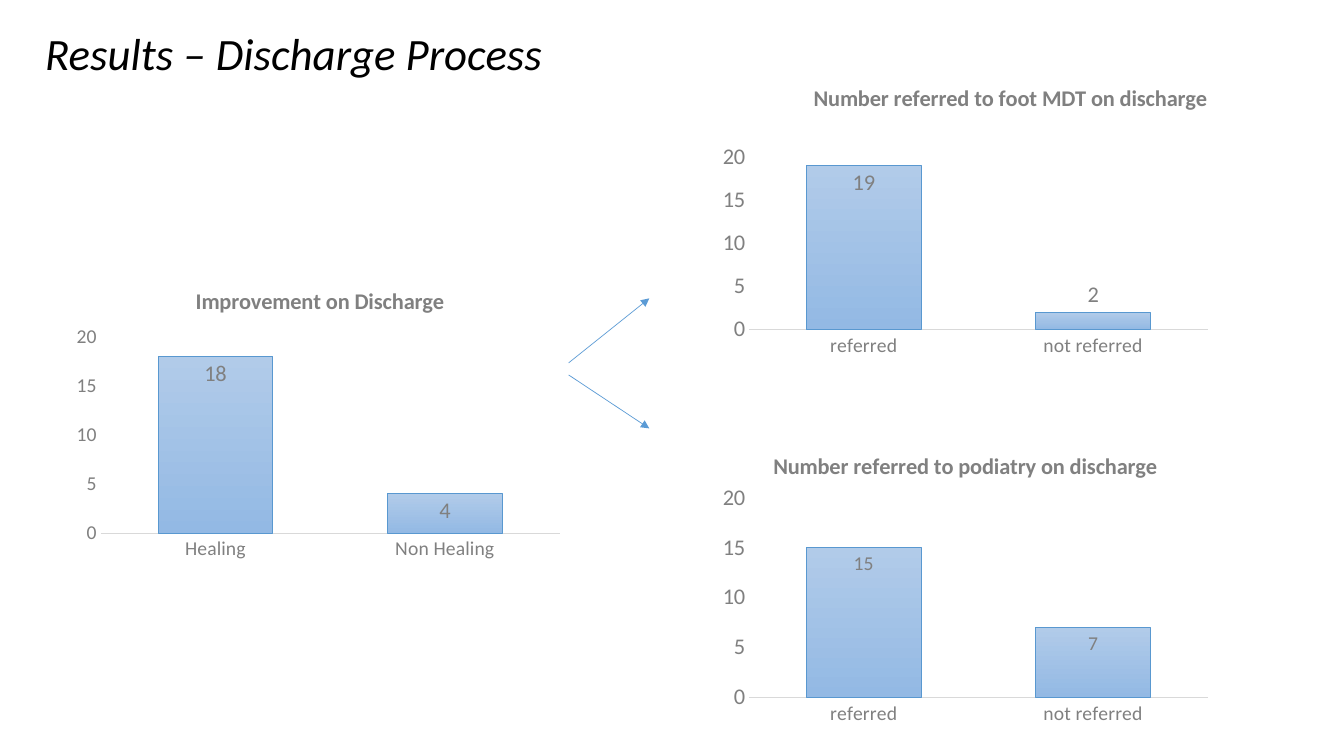
from dataclasses import dataclass

from lxml import etree
from pptx import Presentation
from pptx.chart.data import CategoryChartData
from pptx.dml.color import RGBColor
from pptx.enum.chart import XL_CHART_TYPE, XL_LABEL_POSITION, XL_TICK_MARK
from pptx.enum.shapes import MSO_CONNECTOR
from pptx.enum.text import MSO_ANCHOR
from pptx.oxml.ns import qn
from pptx.util import Pt

EMU_PER_PX = 9144
COLUMNS = XL_CHART_TYPE.COLUMN_CLUSTERED
INSIDE_END = XL_LABEL_POSITION.INSIDE_END
OUTSIDE_END = XL_LABEL_POSITION.OUTSIDE_END
NO_TICKS = XL_TICK_MARK.NONE
STRAIGHT = MSO_CONNECTOR.STRAIGHT
MIDDLE = MSO_ANCHOR.MIDDLE
CHART_SIZE = (500, 300)


@dataclass(frozen=True)
class Theme:
    font: str = "Calibri"
    ink: RGBColor = RGBColor.from_string("000000")
    paper: RGBColor = RGBColor.from_string("FFFFFF")
    grey: RGBColor = RGBColor.from_string("808080")
    axis: RGBColor = RGBColor.from_string("D9D9D9")
    bar_top: RGBColor = RGBColor.from_string("B1CBE9")
    bar_bottom: RGBColor = RGBColor.from_string("93B9E4")
    bar_edge: RGBColor = RGBColor.from_string("5998D0")
    arrow: RGBColor = RGBColor.from_string("5B9BD5")
    heading: int = 32
    large: int = 16
    small: int = 14


THEME = Theme()


@dataclass(frozen=True)
class ColumnChart:
    title: str
    position: tuple
    categories: tuple
    values: tuple
    title_corner: tuple
    plot_area: tuple
    axis_size: int = THEME.large
    label_size: int = THEME.large
    outside_points: tuple = ()


CHARTS = (
    ColumnChart("Number referred to foot MDT on discharge", (708, 60),
                ("referred", "not referred"), (19, 2),
                (0.19, 0.06), (0.07, 0.32, 0.91, 0.57), outside_points=(1,)),
    ColumnChart("Number referred to podiatry on discharge", (708, 425),
                ("referred", "not referred"), (15, 7),
                (0.11, 0.06), (0.07, 0.23, 0.91, 0.66), label_size=THEME.small),
    ColumnChart("Improvement on Discharge", (65, 262),
                ("Healing", "Non Healing"), (18, 4),
                (0.25, 0.06), (0.07, 0.24, 0.91, 0.65), axis_size=THEME.small),
)
ARROWS = ((564, 360, 644, 296), (564, 372, 644, 425))


def px(*lengths):
    return [length * EMU_PER_PX for length in lengths]


def style_font(font, size, color, bold=False, italic=False):
    font.name = THEME.font
    font.size = Pt(size)
    font.color.rgb = color
    font.bold = bold
    font.italic = italic


def set_layout(parent, index, fractions, inner=False):
    """Place a chart part by fractions of the chart: x, y and optionally w, h."""
    for old in parent.findall(qn("c:layout")):
        parent.remove(old)
    layout = etree.Element(qn("c:layout"))
    manual = etree.SubElement(layout, qn("c:manualLayout"))
    settings = [("layoutTarget", "inner")] if inner else []
    settings += [("xMode", "edge"), ("yMode", "edge")]
    settings += zip("xywh", fractions)
    for name, value in settings:
        etree.SubElement(manual, qn(f"c:{name}")).set("val", str(value))
    parent.insert(index, layout)


def style_title(chart, content):
    chart.has_title = True
    title = chart.chart_title
    para = title.text_frame.paragraphs[0]
    para.text = content.title
    style_font(para.font, THEME.large, THEME.grey, bold=True)
    title.include_in_layout = False
    set_layout(title._element, 1, content.title_corner)


def style_axes(chart, content):
    for axis, size in ((chart.category_axis, THEME.small),
                       (chart.value_axis, content.axis_size)):
        axis.has_major_gridlines = False
        axis.major_tick_mark = axis.minor_tick_mark = NO_TICKS
        style_font(axis.tick_labels.font, size, THEME.grey)
    category_line = chart.category_axis.format.line
    category_line.color.rgb = THEME.axis
    category_line.width = Pt(0.75)
    value_axis = chart.value_axis
    value_axis.minimum_scale = 0
    value_axis.maximum_scale = 20
    value_axis.major_unit = 5
    value_axis.format.line.fill.background()


def style_columns(plot, content):
    plot.gap_width = 100
    plot.overlap = -24
    plot.vary_by_categories = False
    series = plot.series[0]
    series.invert_if_negative = False
    fill = series.format.fill
    fill.gradient()
    fill.gradient_angle = 270
    for stop, color in zip(fill.gradient_stops, (THEME.bar_top, THEME.bar_bottom)):
        stop.color.rgb = color
    series.format.line.color.rgb = THEME.bar_edge
    series.format.line.width = Pt(0.75)
    labels = series.data_labels
    labels.show_value = True
    labels.position = INSIDE_END
    style_font(labels.font, content.label_size, THEME.grey)
    for index in content.outside_points:
        label = series.points[index].data_label
        style_font(label.font, content.label_size, THEME.grey)
        label.position = OUTSIDE_END


def add_column_chart(slide, content):
    data = CategoryChartData()
    data.categories = content.categories
    data.add_series("Series 1", content.values)
    frame = slide.shapes.add_chart(
        COLUMNS, *px(*content.position, *CHART_SIZE), data)
    chart = frame.chart
    chart.has_legend = False
    style_font(chart.font, 10, THEME.ink)
    style_title(chart, content)
    style_axes(chart, content)
    style_columns(chart.plots[0], content)
    plot_area = chart._chartSpace.find(".//" + qn("c:plotArea"))
    set_layout(plot_area, 0, content.plot_area, inner=True)


def add_heading(slide, text):
    box = slide.shapes.add_textbox(*px(35, 21, 634, 69))
    box.fill.solid()
    box.fill.fore_color.rgb = THEME.paper
    frame = box.text_frame
    frame.word_wrap = True
    frame.vertical_anchor = MIDDLE
    para = frame.paragraphs[0]
    para.text = text
    para.line_spacing = 0.9
    style_font(para.font, THEME.heading, THEME.ink, italic=True)


def add_arrow(slide, ends):
    arrow = slide.shapes.add_connector(STRAIGHT, *px(*ends))
    arrow.line.color.rgb = THEME.arrow
    arrow.line.width = Pt(0.5)
    properties = arrow._element.spPr
    line = properties.find(qn("a:ln"))
    etree.SubElement(line, qn("a:tailEnd")).set("type", "triangle")
    etree.SubElement(properties, qn("a:effectLst"))


def main():
    deck = Presentation()
    deck.slide_width, deck.slide_height = px(1333, 750)
    slide = deck.slides.add_slide(deck.slide_layouts[6])
    for content in CHARTS:
        add_column_chart(slide, content)
    add_heading(slide, "Results – Discharge Process")
    for ends in ARROWS:
        add_arrow(slide, ends)
    deck.save("out.pptx")


if __name__ == "__main__":
    main()
